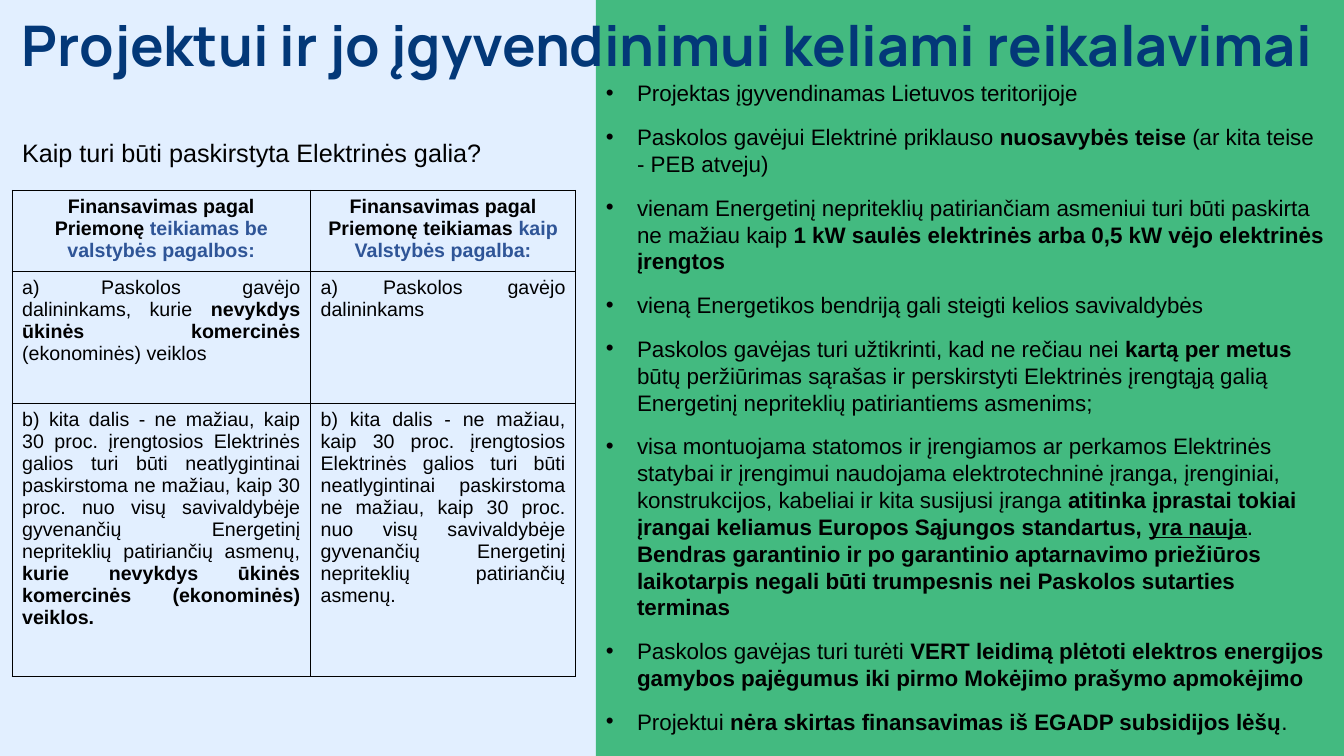
from lxml import etree
from pptx import Presentation
from pptx.dml.color import RGBColor
from pptx.enum.shapes import MSO_SHAPE
from pptx.enum.text import MSO_ANCHOR, MSO_AUTO_SIZE, PP_ALIGN
from pptx.oxml.ns import qn
from pptx.util import Inches, Pt

COLORS = {"background": "E2EFFF", "panel": "43BA80", "title": "033878",
          "text": "000000", "accent": "2F5597"}


def add_runs(paragraph, runs, size, font="Arial", color="text"):
    for text, style in runs:
        run = paragraph.add_run()
        run.text = text
        run.font.name = font
        run.font.size = Pt(size)
        run.font.bold = "b" in style
        if "u" in style:
            run.font.underline = True
        run.font.color.rgb = RGBColor.from_string(COLORS["accent" if "a" in style else color])


def add_text_frame(left, top, width, height):
    box = slide.shapes.add_textbox(Inches(left), Inches(top), Inches(width), Inches(height))
    box.text_frame.word_wrap = True
    return box.text_frame


presentation = Presentation()
presentation.slide_width = Inches(13.33)
presentation.slide_height = Inches(7.5)
slide = presentation.slides.add_slide(presentation.slide_layouts[6])
slide.background.fill.solid()
slide.background.fill.fore_color.rgb = RGBColor.from_string(COLORS["background"])

panel = slide.shapes.add_shape(MSO_SHAPE.RECTANGLE, Inches(5.91), 0, Inches(7.42), Inches(7.5))
panel.shadow.inherit = False
panel.fill.solid()
panel.fill.fore_color.rgb = RGBColor.from_string(COLORS["panel"])
panel.line.fill.background()

requirements = [
    [("Projektas įgyvendinamas Lietuvos teritorijoje", "")],
    [("Paskolos gavėjui Elektrinė priklauso ", ""), ("nuosavybės teise", "b"),
     (" (ar kita teise - PEB atveju)", "")],
    [("vienam Energetinį nepriteklių patiriančiam asmeniui turi būti paskirta ne mažiau kaip ", ""),
     ("1 kW saulės elektrinės arba 0,5 kW vėjo elektrinės įrengtos", "b")],
    [("vieną Energetikos bendriją gali steigti kelios savivaldybės", "")],
    [("Paskolos gavėjas turi užtikrinti, kad ne rečiau nei ", ""), ("kartą per metus ", "b"),
     ("būtų peržiūrimas sąrašas ir perskirstyti Elektrinės įrengtąją galią "
      "Energetinį nepriteklių patiriantiems asmenims;", "")],
    [("visa montuojama statomos ir įrengiamos ar perkamos Elektrinės statybai ir įrengimui "
      "naudojama elektrotechninė įranga, įrenginiai, konstrukcijos, kabeliai ir kita "
      "susijusi įranga ", ""),
     ("atitinka įprastai tokiai įrangai keliamus Europos Sąjungos standartus, ", "b"),
     ("yra nauja", "bu"), (". ", ""),
     ("Bendras garantinio ir po garantinio aptarnavimo priežiūros laikotarpis negali būti "
      "trumpesnis nei Paskolos sutarties terminas", "b")],
    [("Paskolos gavėjas turi turėti ", ""),
     ("VERT leidimą plėtoti elektros energijos gamybos pajėgumus iki pirmo "
      "Mokėjimo prašymo apmokėjimo", "b")],
    [("Projektui ", ""), ("nėra skirtas finansavimas iš EGADP subsidijos lėšų", "b"), (".", "")],
]
requirements_frame = add_text_frame(5.91, 0.74, 7.35, 6.66)
requirements_frame.auto_size = MSO_AUTO_SIZE.SHAPE_TO_FIT_TEXT
for index, runs in enumerate(requirements):
    paragraph = requirements_frame.add_paragraph() if index else requirements_frame.paragraphs[0]
    paragraph.space_before = paragraph.space_after = Pt(6)
    properties = paragraph._p.get_or_add_pPr()
    properties.set("marL", str(Inches(0.31)))
    properties.set("indent", str(-Inches(0.31)))
    etree.SubElement(properties, qn("a:buFont"), typeface="Arial")
    etree.SubElement(properties, qn("a:buChar"), char="•")
    add_runs(paragraph, runs, 16)

title_frame = add_text_frame(0.12, 0, 13.06, 0.96)
title_frame.vertical_anchor = MSO_ANCHOR.MIDDLE
title_frame.paragraphs[0].line_spacing = 0.9
add_runs(title_frame.paragraphs[0],
         [("Projektui ir jo įgyvendinimui keliami reikalavimai", "b")], 40, "Manrope", "title")

share = ("b) kita dalis - ne mažiau, kaip 30 proc. įrengtosios Elektrinės galios turi būti "
         "neatlygintinai paskirstoma ne mažiau, kaip 30 proc. nuo visų savivaldybėje "
         "gyvenančių Energetinį nepriteklių patiriančių asmenų")
rows = [
    [[("Finansavimas pagal Priemonę ", "b"), ("teikiamas be valstybės pagalbos:", "ba")],
     [("Finansavimas pagal Priemonę teikiamas ", "b"), ("kaip Valstybės pagalba:", "ba")]],
    [[("a) Paskolos gavėjo dalininkams, kurie ", ""), ("nevykdys ūkinės komercinės", "b"),
      (" (ekonominės) veiklos", "")],
     [("a) Paskolos gavėjo dalininkams", "")]],
    [[(share + ", ", ""), ("kurie nevykdys ūkinės komercinės (ekonominės) veiklos.", "b")],
     [(share + ".", "")]],
]
table = slide.shapes.add_table(3, 2, Inches(0.12), Inches(1.89), Inches(5.59), Inches(4.82)).table
table.first_row = table.horz_banding = False
for column, width in zip(table.columns, (2.96, 2.63)):
    column.width = Inches(width)
for row, height in zip(table.rows, (0.8, 1.31, 2.71)):
    row.height = Inches(height)
for row_index, row in enumerate(rows):
    for column_index, runs in enumerate(row):
        cell = table.cell(row_index, column_index)
        paragraph = cell.text_frame.paragraphs[0]
        paragraph.alignment = PP_ALIGN.JUSTIFY if row_index else PP_ALIGN.CENTER
        add_runs(paragraph, runs, 14)
        cell_properties = cell._tc.get_or_add_tcPr()
        for side in ("lnL", "lnR", "lnT", "lnB"):
            border = etree.SubElement(cell_properties, qn("a:" + side), w=str(Pt(1)))
            border_fill = etree.SubElement(border, qn("a:solidFill"))
            etree.SubElement(border_fill, qn("a:srgbClr"), val=COLORS["text"])
        cell.fill.background()

question_frame = add_text_frame(0.12, 1.31, 5.21, 0.4)
question_frame.auto_size = MSO_AUTO_SIZE.SHAPE_TO_FIT_TEXT
add_runs(question_frame.paragraphs[0], [("Kaip turi būti paskirstyta Elektrinės galia?", "")], 18)

presentation.save("out.pptx")
